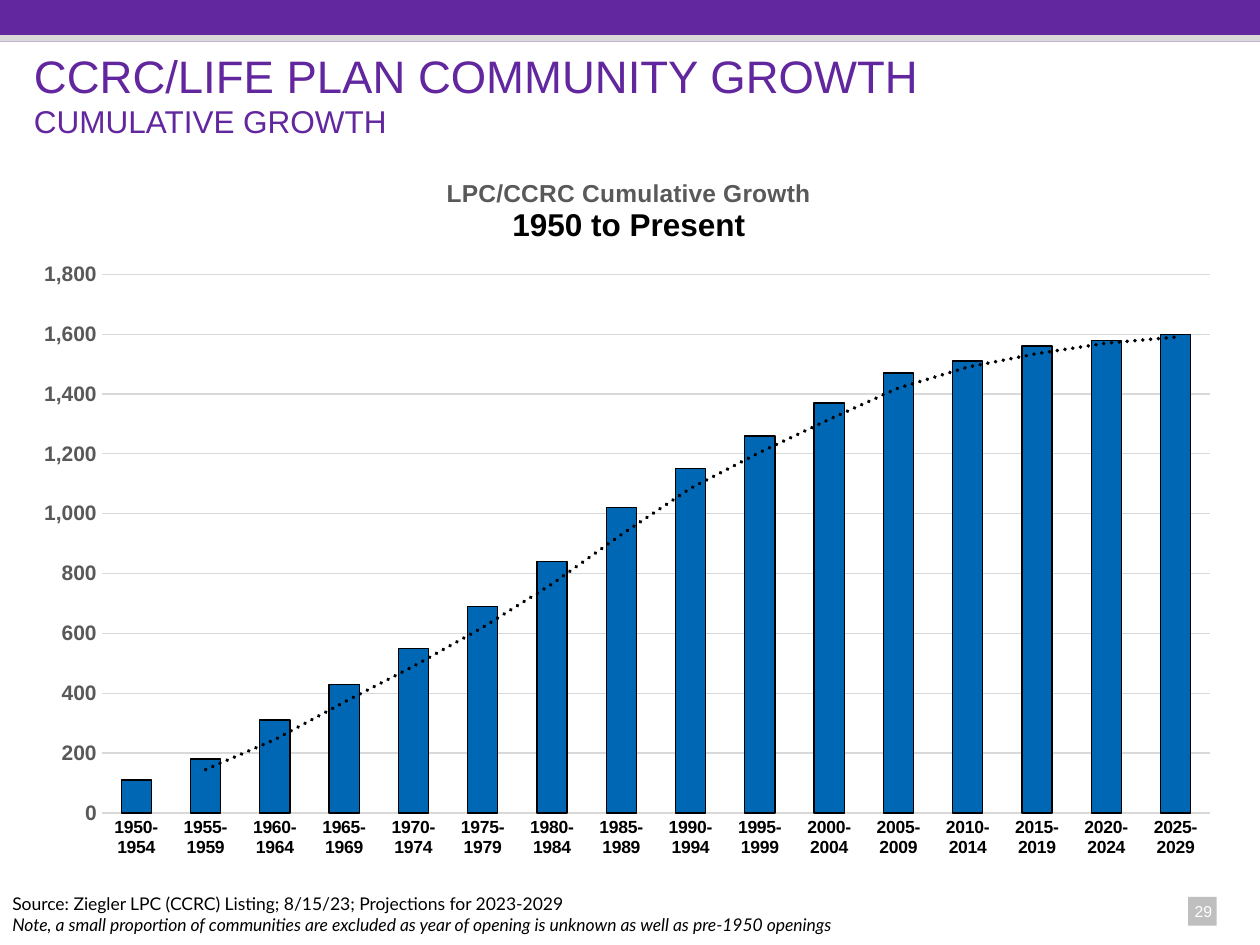
from dataclasses import dataclass

from pptx import Presentation
from pptx.chart.data import CategoryChartData
from pptx.dml.color import RGBColor
from pptx.enum.chart import XL_CHART_TYPE as ChartType, XL_TICK_MARK as TickMark
from pptx.enum.shapes import MSO_SHAPE as Preset
from pptx.enum.text import MSO_ANCHOR as Anchor, MSO_AUTO_SIZE as AutoSize, PP_ALIGN as Align
from pptx.oxml import parse_xml
from pptx.oxml.ns import nsdecls
from pptx.util import Cm, Pt


@dataclass(frozen=True)
class Theme:
    purple: str = "62269E"
    blue: str = "0067B4"
    black: str = "000000"
    white: str = "FFFFFF"
    dark_gray: str = "595959"
    mid_gray: str = "BFBFBF"
    light_gray: str = "D9D9D9"
    sans: str = "Arial"
    note_font: str = "Lato"
    title: int = 26
    subtitle: int = 18
    chart_heading: int = 14
    chart_period: int = 18
    value_label: int = 12
    small: int = 10
    number: int = 9
    thin: float = 0.75


def style_font(font, size, color, name, bold=None):
    font.size, font.name, font.bold = Pt(size), name, bold
    font.color.rgb = RGBColor.from_string(color)


def style_line(line, color, width):
    line.color.rgb = RGBColor.from_string(color)
    line.width = Pt(width)


def manual_layout(inner=False, **fractions):
    """Return a chart layout placed by fractions of the chart area."""
    target = '<c:layoutTarget val="inner"/>' if inner else ""
    modes = '<c:xMode val="edge"/><c:yMode val="edge"/>'
    values = "".join(f'<c:{key} val="{value}"/>' for key, value in fractions.items())
    return parse_xml(f'<c:layout {nsdecls("c")}><c:manualLayout>{target}{modes}{values}'
                     '</c:manualLayout></c:layout>')


class SlideBuilder:
    def __init__(self, slide, theme):
        self.slide, self.theme = slide, theme

    def bar(self, box, color):
        shape = self.slide.shapes.add_shape(Preset.RECTANGLE, *map(Cm, box))
        shape.shadow.inherit = False
        shape.fill.solid()
        shape.fill.fore_color.rgb = RGBColor.from_string(color)
        shape.line.fill.background()

    def title(self, box, heading, subheading):
        theme, shape = self.theme, self.slide.shapes.title
        shape.left, shape.top, shape.width, shape.height = map(Cm, box)
        frame = shape.text_frame
        frame.vertical_anchor, frame.auto_size = Anchor.BOTTOM, AutoSize.NONE
        paragraph = frame.paragraphs[0]
        paragraph.alignment = Align.LEFT
        style_font(paragraph.font, theme.title, theme.purple, theme.sans)
        paragraph.add_run().text = heading
        paragraph.add_line_break()
        run = paragraph.add_run()
        run.text = subheading
        run.font.size = Pt(theme.subtitle)

    def text(self, box, lines, size, color, font, align=Align.LEFT):
        """Add a text box; each line is a pair of wording and italic flag."""
        frame = self.slide.shapes.add_textbox(*map(Cm, box)).text_frame
        frame.word_wrap, frame.auto_size = True, AutoSize.SHAPE_TO_FIT_TEXT
        for index, (wording, italic) in enumerate(lines):
            paragraph = frame.add_paragraph() if index else frame.paragraphs[0]
            paragraph.text, paragraph.alignment = wording, align
            style_font(paragraph.font, size, color, font)
            paragraph.font.italic = italic

    def column_chart(self, box, categories, values):
        theme = self.theme
        data = CategoryChartData(number_format="#,##0")
        data.categories = categories
        data.add_series("Series 1", values)
        chart = self.slide.shapes.add_chart(
            ChartType.COLUMN_CLUSTERED, *map(Cm, box), data).chart
        chart.has_legend = False
        style_font(chart.font, theme.small, theme.black, theme.sans)

        # Columns
        plot = chart.plots[0]
        plot.gap_width, plot.overlap, plot.vary_by_categories = 130, -27, False
        columns = plot.series[0].format
        columns.fill.solid()
        columns.fill.fore_color.rgb = RGBColor.from_string(theme.blue)
        style_line(columns.line, theme.black, theme.thin)

        # Axes
        for axis in (chart.category_axis, chart.value_axis):
            axis.major_tick_mark = axis.minor_tick_mark = TickMark.NONE
        category_axis, value_axis = chart.category_axis, chart.value_axis
        style_font(category_axis.tick_labels.font, theme.small, theme.black, theme.sans, True)
        style_line(category_axis.format.line, theme.light_gray, theme.thin)
        style_font(value_axis.tick_labels.font, theme.value_label, theme.dark_gray,
                   theme.sans, True)
        value_axis.tick_labels.number_format = "#,##0"
        value_axis.tick_labels.number_format_is_linked = False
        value_axis.minimum_scale, value_axis.maximum_scale = 0, 1800
        value_axis.major_unit = 200
        value_axis.format.line.fill.background()
        style_line(value_axis.major_gridlines.format.line, theme.light_gray, theme.thin)
        return chart

    def chart_title(self, chart, heading, period):
        theme, frame = self.theme, chart.chart_title.text_frame
        first, second = frame.paragraphs[0], frame.add_paragraph()
        first.text, second.text = heading, period
        style_font(first.font, theme.chart_heading, theme.dark_gray, theme.sans, True)
        style_font(second.font, theme.chart_period, theme.black, theme.sans, True)

    def chart_layout(self, chart, title, plot):
        root = chart.element
        for old in root.xpath("c:chart/c:title/c:layout | c:chart/c:plotArea/c:layout"):
            old.getparent().remove(old)
        root.xpath("c:chart/c:title/c:tx")[0].addnext(manual_layout(**title))
        root.xpath("c:chart/c:plotArea")[0].insert(0, manual_layout(inner=True, **plot))

    def moving_average(self, chart, period, width):
        trend = parse_xml(
            f'<c:trendline {nsdecls("c", "a")}><c:spPr><a:ln w="{Pt(width)}" cap="rnd">'
            f'<a:solidFill><a:srgbClr val="{self.theme.black}"/></a:solidFill>'
            '<a:prstDash val="sysDot"/></a:ln></c:spPr>'
            f'<c:trendlineType val="movingAvg"/><c:period val="{period}"/>'
            '<c:dispRSqr val="0"/><c:dispEq val="0"/></c:trendline>')
        chart.element.xpath(".//c:ser/c:cat")[0].addprevious(trend)


def main():
    presentation = Presentation()
    presentation.slide_width, presentation.slide_height = Cm(25.4), Cm(19.05)
    theme = Theme()
    builder = SlideBuilder(presentation.slides.add_slide(presentation.slide_layouts[5]), theme)

    # Page number and header band
    builder.bar((23.95, 18.08, 0.58, 0.58), theme.mid_gray)
    builder.text((23.09, 18.06, 2.34, 0.64), [("29", None)], theme.number, theme.white,
                 theme.sans, Align.CENTER)
    builder.bar((0, 0, 25.4, 0.84), theme.purple)
    builder.bar((0, 0.71, 25.4, 0.13), theme.light_gray)

    # Title
    builder.title((0.43, 0.61, 24.56, 2.34), "CCRC/LIFE PLAN COMMUNITY GROWTH",
                  "CUMULATIVE GROWTH")

    # Source and note
    builder.text((0, 17.88, 18.92, 1.55), [
        ("Source: Ziegler LPC (CCRC) Listing; 8/15/23; Projections for 2023-2029", None),
        ("Note, a small proportion of communities are excluded as year of opening is unknown "
         "as well as pre-1950 openings", True),
    ], theme.small, theme.black, theme.note_font)

    # Cumulative growth by five-year period
    periods = [f"{year}-{year + 4}" for year in range(1950, 2030, 5)]
    communities = [110, 180, 310, 430, 550, 690, 840, 1020,
                   1150, 1260, 1370, 1470, 1510, 1560, 1580, 1600]
    chart = builder.column_chart((0.33, 3.07, 24.56, 14.48), periods, communities)
    builder.chart_title(chart, "LPC/CCRC Cumulative Growth", "1950 to Present")
    builder.chart_layout(chart, title={"x": 0.35, "y": 0.03},
                         plot={"x": 0.07, "y": 0.17, "w": 0.91, "h": 0.75})
    builder.moving_average(chart, period=2, width=2.25)

    presentation.save("out.pptx")


if __name__ == "__main__":
    main()
